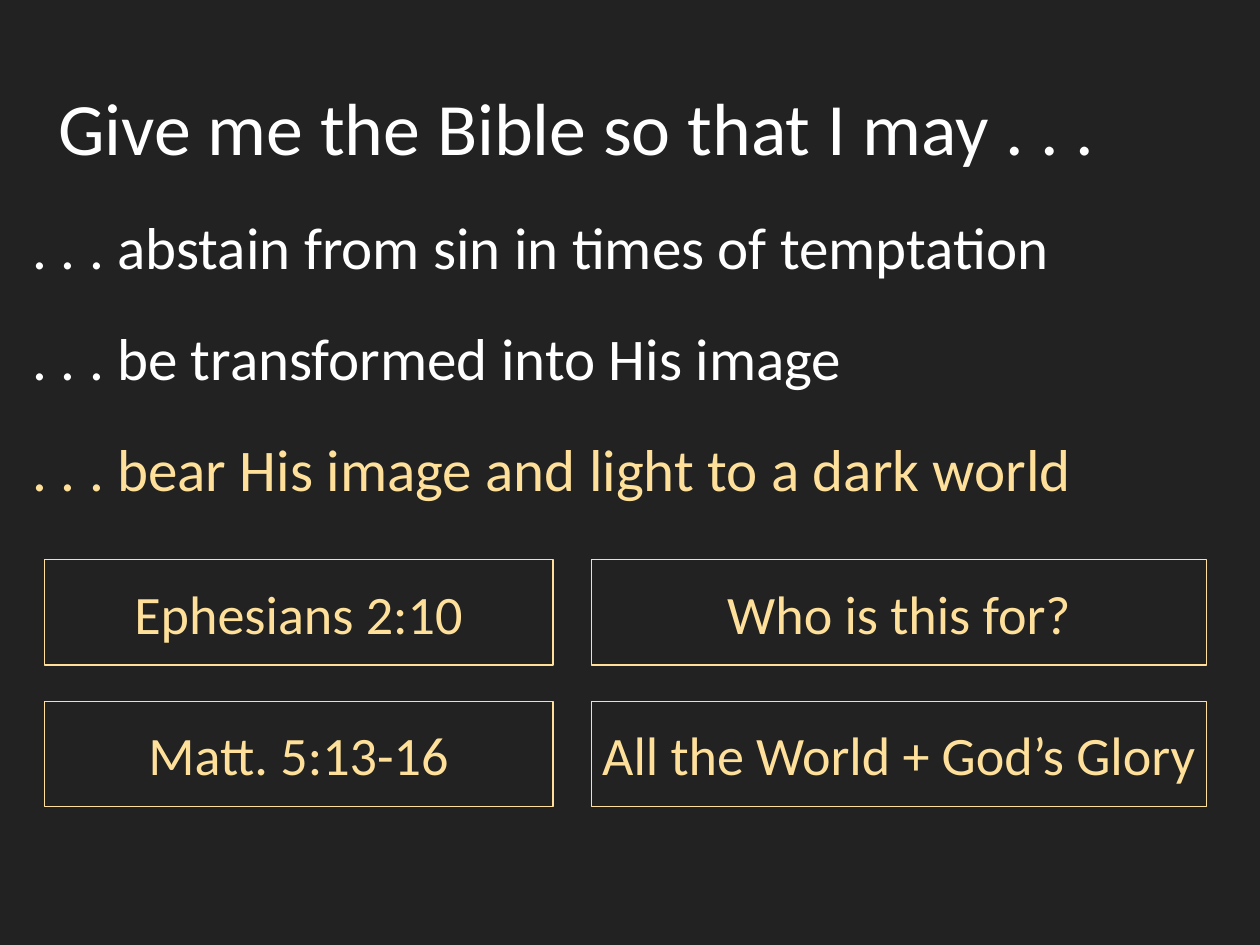
from pptx import Presentation
from pptx import util as u
from pptx.dml.color import RGBColor
from pptx.enum import shapes, text

COLORS = {"background": "222222", "white": "FFFFFF", "gold": "FEE09A"}
TITLE = "Give me the Bible so that I may . . ."
REASONS = [
    (". . . abstain from sin in times of temptation", "white"),
    (". . . be transformed into His image", "white"),
    (". . . bear His image and light to a dark world", "gold"),
]
ANSWERS = [
    ("Ephesians 2:10", "Who is this for?"),
    ("Matt. 5:13-16", "All the World + God’s Glory"),
]


def color(name):
    """Return the named colour."""
    return RGBColor.from_string(COLORS[name])


def write(box, words, size, ink, align=text.PP_ALIGN.LEFT):
    """Set the single paragraph of a box."""
    frame = box.text_frame
    frame.word_wrap = True
    frame.auto_size = text.MSO_AUTO_SIZE.SHAPE_TO_FIT_TEXT
    frame.vertical_anchor = text.MSO_ANCHOR.MIDDLE
    frame.margin_left = frame.margin_right = u.Pt(4.5)
    frame.margin_top = frame.margin_bottom = u.Pt(4.5)
    para = frame.paragraphs[0]
    para.text = words
    para.alignment = align
    para.space_before = u.Pt(24)
    para.font.name = "Calibri"
    para.font.size = u.Pt(size)
    para.font.color.rgb = color(ink)


def add_title(page, left, top, width, height):
    """Place the heading in the given box."""
    box = page.shapes.add_textbox(*map(u.Pt, (left, top, width, height)))
    write(box, TITLE, 60, "white")


def add_reasons(page, left, top, width, height):
    """Stack the reasons evenly in the given box."""
    step = height / len(REASONS)
    for row, (words, ink) in enumerate(REASONS):
        place = (left, top + row * step, width, step)
        box = page.shapes.add_textbox(*map(u.Pt, place))
        write(box, words, 48, ink)


def add_answers(page, left, top, width, height):
    """Lay out the outlined answers in two columns in the given box."""
    cell_height = 85.5
    step = height - cell_height
    narrow, wide = 413.5, 499.5
    columns = [(left, narrow), (left + width - wide, wide)]
    for row, answers in enumerate(ANSWERS):
        for words, (x, cell_width) in zip(answers, columns):
            place = (x, top + row * step, cell_width, cell_height)
            box = page.shapes.add_shape(
                shapes.MSO_SHAPE.RECTANGLE, *map(u.Pt, place))
            box.shadow.inherit = False
            box.fill.background()
            box.line.color.rgb = color("gold")
            box.line.width = u.Pt(1)
            write(box, words, 44, "gold", text.PP_ALIGN.CENTER)


def main():
    """Build and save the slide."""
    deck = Presentation()
    deck.slide_width, deck.slide_height = u.Pt(1024), u.Pt(768)
    page = deck.slides.add_slide(deck.slide_layouts[6])
    page.background.fill.solid()
    page.background.fill.fore_color.rgb = color("background")
    add_title(page, 43, 49.5, 938, 105)
    add_reasons(page, 22, 154.5, 970, 270.5)
    add_answers(page, 36, 455, 944.5, 200.7)
    deck.save("out.pptx")


if __name__ == "__main__":
    main()
